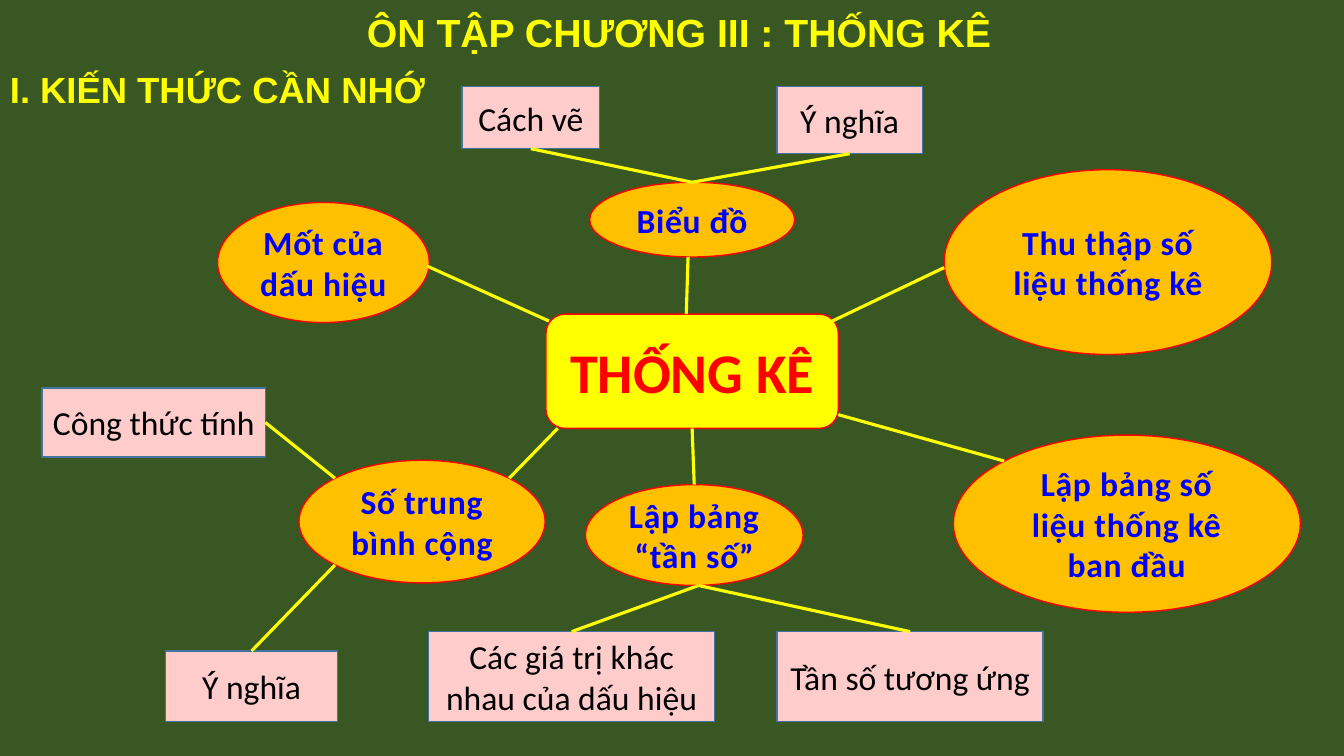
import lxml.etree
import pptx
import pptx.dml.color
import pptx.enum.shapes
import pptx.enum.text
import pptx.oxml
import pptx.oxml.ns
import pptx.util

RGBColor = pptx.dml.color.RGBColor
SHAPE = pptx.enum.shapes.MSO_SHAPE
GREEN = RGBColor(0x38, 0x57, 0x23)
YELLOW = RGBColor(0xFF, 0xFF, 0x00)
RED = RGBColor(0xFF, 0x00, 0x00)
GOLD = RGBColor(0xFF, 0xC0, 0x00)
PINK = RGBColor(0xFF, 0xCC, 0xCC)
STEEL = RGBColor(0x43, 0x73, 0x9E)
BLUE = RGBColor(0x00, 0x00, 0xFF)
SKY = RGBColor(0x5B, 0x9B, 0xD5)
BLACK = RGBColor(0x00, 0x00, 0x00)

COLUMNS, ROWS = 160, 90

HEADINGS = [
    ("ÔN TẬP CHƯƠNG III : THỐNG KÊ", 28, (42.5, 0.4, 78.8, 6.8)),
    ("I. KIẾN THỨC CẦN NHỚ", 26, (0, 7.4, 52.3, 6.5)),
]

STYLES = {
    "hub": dict(outline=SHAPE.ROUNDED_RECTANGLE, fill=YELLOW, line=RED,
                font=dict(size=40, bold=True, color=RED)),
    "topic": dict(outline=SHAPE.OVAL, fill=GOLD, line=RED,
                  font=dict(size=24, bold=True, color=BLUE)),
    "detail": dict(outline=SHAPE.RECTANGLE, fill=PINK, line=STEEL,
                   font=dict(size=24, bold=False, color=BLACK)),
}

NODES = {
    "statistics": ("hub", "THỐNG KÊ", (65, 37.4, 34.8, 13.6)),
    "chart": ("topic", "Biểu đồ", (70.2, 21.7, 24.4, 8.9)),
    "collect": ("topic", "Thu thập số liệu thống kê", (112.4, 20.2, 39, 22)),
    "raw table": ("topic", "Lập bảng số liệu thống kê ban đầu", (113.5, 51.8, 41.3, 21.1)),
    "frequency": ("topic", "Lập bảng “tần số”", (69.7, 57.7, 25.9, 12)),
    "mode": ("topic", "Mốt của dấu hiệu", (25.9, 24.1, 25.2, 14.3)),
    "mean": ("topic", "Số trung bình cộng", (35.6, 54.8, 29.3, 14.6)),
    "drawing": ("detail", "Cách vẽ", (55, 10.3, 16.4, 7.4)),
    "chart meaning": ("detail", "Ý nghĩa", (92.5, 10.3, 17.3, 8)),
    "values": ("detail", "Các giá trị khác nhau của dấu hiệu", (51, 75.2, 34.1, 10.7)),
    "counts": ("detail", "Tần số tương ứng", (92.5, 75.2, 31.7, 10.7)),
    "formula": ("detail", "Công thức tính", (5, 46.2, 26.6, 8.2)),
    "mean meaning": ("detail", "Ý nghĩa", (19.7, 77.5, 20.5, 8.4)),
}

TOP, LEFT, BOTTOM, RIGHT = SIDES = [(0.5, 0), (0, 0.5), (0.5, 1), (1, 0.5)]
NEAR, FAR = 0.146, 0.854

LINKS = [
    ("statistics", (0.48, 0), "chart", (0.48, 1)),
    ("statistics", (0.98, 0.06), "collect", (0, 0.53)),
    ("statistics", (1, 0.88), "raw table", (NEAR, NEAR)),
    ("statistics", BOTTOM, "frequency", TOP),
    ("statistics", (0.04, 1), "mean", (FAR, NEAR)),
    ("statistics", (0.01, 0.06), "mode", (0.99, 0.53)),
    ("chart", TOP, "drawing", BOTTOM),
    ("chart", TOP, "chart meaning", BOTTOM),
    ("frequency", (0.52, 1), "values", TOP),
    ("frequency", (0.52, 1), "counts", TOP),
    ("mean", (NEAR, NEAR), "formula", RIGHT),
    ("mean", (NEAR, FAR), "mean meaning", TOP),
]

deck = pptx.Presentation()
deck.slide_width = pptx.util.Inches(13.33)
deck.slide_height = pptx.util.Inches(7.5)
slide = deck.slides.add_slide(deck.slide_layouts[6])
slide.background.fill.solid()
slide.background.fill.fore_color.rgb = GREEN


def place(cells):
    column, row = deck.slide_width / COLUMNS, deck.slide_height / ROWS
    return [round(cell * unit) for cell, unit in zip(cells, (column, row) * 2)]


def write(frame, text, face, size, bold, color):
    run = frame.paragraphs[0].add_run()
    run.text = text
    for name, value in dict(name=face, size=pptx.util.Pt(size), bold=bold).items():
        setattr(run.font, name, value)
    run.font.color.rgb = color
    return run


def add_glow(run):
    namespace = pptx.oxml.ns.nsdecls("a")
    properties = run.font._element
    properties.set("spc", "50")
    edge = pptx.oxml.parse_xml(
        f'<a:ln {namespace} w="9525"><a:solidFill><a:srgbClr val="{SKY}"/></a:solidFill></a:ln>')
    shade = pptx.oxml.parse_xml(
        f'<a:effectLst {namespace}><a:outerShdw blurRad="12700" dist="38100" dir="2700000">'
        f'<a:srgbClr val="{SKY}"/></a:outerShdw></a:effectLst>')
    properties.insert(0, edge)
    properties.find(pptx.oxml.ns.qn("a:solidFill")).addnext(shade)


def add_node(kind, text, cells):
    style = STYLES[kind]
    node = slide.shapes.add_shape(style["outline"], *place(cells))
    node.shadow.inherit = False
    node.fill.solid()
    node.fill.fore_color.rgb = style["fill"]
    node.line.color.rgb = style["line"]
    node.line.width = pptx.util.Pt(1)
    frame = node.text_frame
    frame.word_wrap = True
    frame.vertical_anchor = pptx.enum.text.MSO_ANCHOR.MIDDLE
    frame.paragraphs[0].alignment = pptx.enum.text.PP_ALIGN.CENTER
    run = write(frame, text, "Calibri", **style["font"])
    if kind == "topic":
        add_glow(run)
    return node


def spot(node, share):
    return (round(node.left + node.width * share[0]),
            round(node.top + node.height * share[1]))


def add_link(start, start_share, end, end_share):
    link = slide.shapes.add_connector(
        pptx.enum.shapes.MSO_CONNECTOR.STRAIGHT,
        *spot(nodes[start], start_share), *spot(nodes[end], end_share))
    link.line.color.rgb = YELLOW
    link.line.width = pptx.util.Pt(2.25)
    lxml.etree.SubElement(link._element.spPr, pptx.oxml.ns.qn("a:effectLst"))
    for join, key, share in ((link.begin_connect, start, start_share),
                             (link.end_connect, end, end_share)):
        if NODES[key][0] != "topic" and share in SIDES:
            join(nodes[key], SIDES.index(share))


for text, size, cells in HEADINGS:
    heading = slide.shapes.add_textbox(*place(cells))
    heading.text_frame.word_wrap = False
    heading.text_frame.auto_size = pptx.enum.text.MSO_AUTO_SIZE.SHAPE_TO_FIT_TEXT
    write(heading.text_frame, text, "Arial", size, True, YELLOW)

nodes = {key: add_node(*entry) for key, entry in NODES.items()}
for entry in LINKS:
    add_link(*entry)

deck.save("out.pptx")
